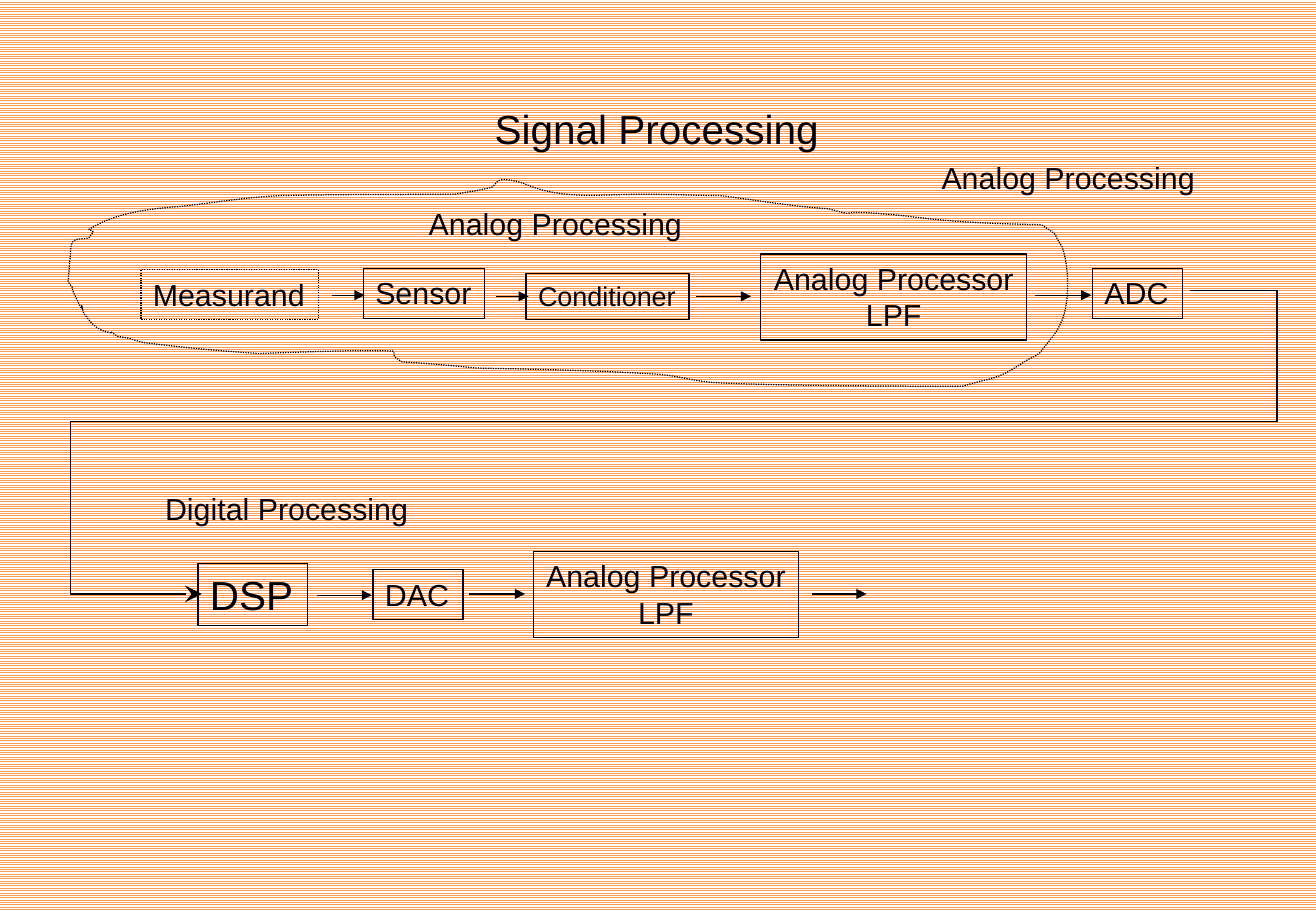
from lxml.etree import SubElement
from pptx import Presentation
from pptx.dml.color import RGBColor
from pptx.enum.dml import MSO_LINE, MSO_PATTERN
from pptx.enum.shapes import MSO_CONNECTOR, MSO_SHAPE
from pptx.enum.text import MSO_ANCHOR, MSO_AUTO_SIZE, PP_ALIGN
from pptx.oxml.ns import qn
from pptx.util import Emu, Inches, Pt

COLUMNS, ROWS = 1083, 750
CELL = Inches(0.01)
INK, STRIPE, PAPER = "000000", "F89E5A", "FFFFFF"
FONT = "Arial"

TITLE = ("Signal Processing", (397, 81, 287, 50), 24)
CAPTIONS = [
    ("Analog Processing", (765, 126, 230, 40), 18),
    ("Analog Processing", (343, 164, 230, 40), 18),
    ("Digital Processing", (126, 399, 221, 40), 18),
]
STAGES = [
    ("Measurand", (116, 222, 146, 41), 18),
    ("Sensor", (299, 221, 100, 41), 18),
    ("Conditioner", (433, 225, 134, 38), 16),
    ("Analog Processor\nLPF", (626, 209, 219, 71), 18),
    ("ADC", (899, 221, 74, 41), 18),
    ("DSP", (163, 464, 90, 51), 24),
    ("DAC", (307, 469, 74, 41), 18),
    ("Analog Processor\nLPF", (439, 454, 218, 71), 18),
]
DOTTED_STAGE = "Measurand"
ARROWS = [
    (273, 300, 243), (408, 435, 244), (573, 618, 244), (852, 898, 243),
    (261, 306, 490), (386, 432, 489), (668, 713, 489),
]
FEED = [(979, 239), (1051, 239), (1051, 347), (58, 347), (58, 489), (166, 489)]
CLOUD_START = (73, 189)
CLOUD_CURVES = [
    (95, 175, 122, 172, 148, 170), (176, 167, 205, 162, 233, 161),
    (280, 160, 327, 160, 374, 160), (384, 158, 395, 157, 405, 154),
    (408, 152, 409, 148, 413, 148), (419, 147, 431, 151, 431, 151),
    (465, 166, 498, 159, 538, 160), (556, 160, 574, 161, 592, 161),
    (610, 163, 627, 166, 644, 168), (657, 170, 682, 172, 682, 172),
    (717, 181, 671, 170, 747, 178), (786, 183, 812, 184, 857, 185),
    (874, 196, 865, 190, 874, 203), (880, 219, 881, 252, 872, 268),
    (869, 275, 862, 282, 857, 289), (855, 292, 850, 294, 846, 296),
    (838, 301, 828, 308, 818, 311), (813, 313, 808, 313, 803, 315),
    (799, 316, 792, 318, 792, 318), (779, 318, 642, 318, 588, 315),
    (572, 314, 556, 309, 540, 308), (491, 305, 441, 304, 392, 303),
    (372, 301, 351, 299, 331, 298), (329, 296, 327, 296, 325, 294),
    (324, 293, 325, 289, 323, 289), (286, 288, 250, 290, 213, 291),
    (180, 289, 150, 286, 118, 282), (103, 278, 110, 279, 97, 277),
    (83, 268, 101, 278, 84, 272), (77, 269, 73, 263, 69, 258),
    (64, 241, 72, 265, 64, 248), (54, 228, 65, 244, 56, 232),
    (57, 224, 57, 217, 58, 210), (58, 206, 58, 202, 60, 199),
    (62, 196, 68, 197, 73, 196), (77, 190, 79, 191, 73, 189),
]


def color(hex_code):
    return RGBColor.from_string(hex_code)


def cells(*counts):
    return [Emu(count * CELL) for count in counts]


def write(shape, text, size):
    frame = shape.text_frame
    frame.text = text
    frame.word_wrap = False
    frame.auto_size = MSO_AUTO_SIZE.SHAPE_TO_FIT_TEXT
    frame.vertical_anchor = MSO_ANCHOR.TOP
    several = len(frame.paragraphs) > 1
    for paragraph in frame.paragraphs:
        paragraph.alignment = PP_ALIGN.CENTER if several else PP_ALIGN.LEFT
        paragraph.line_spacing = 1.0
        paragraph.space_before = Pt(0)
        paragraph.font.name = FONT
        paragraph.font.size = Pt(size)
        paragraph.font.color.rgb = color(INK)


def stroke(shape, dotted=False, arrowhead=None, head_size="med"):
    shape.line.color.rgb = color(INK)
    shape.line.width = Pt(0.75)
    if dotted:
        shape.line.dash_style = MSO_LINE.ROUND_DOT
    if arrowhead:
        outline = shape._element.spPr.find(qn("a:ln"))
        SubElement(outline, qn("a:tailEnd"), type=arrowhead, w=head_size, len=head_size)


def add_outline(slide, points, close, **style):
    start, *rest = [cells(*point) for point in points]
    builder = slide.shapes.build_freeform(*start)
    builder.add_line_segments(rest, close=close)
    outline = builder.convert_to_shape()
    outline.fill.background()
    outline.shadow.inherit = False
    stroke(outline, **style)
    return outline


def bend(outline):
    segments = list(outline._element.iter(qn("a:lnTo")))
    for first, second, third in zip(segments[::3], segments[1::3], segments[2::3]):
        first.tag = qn("a:cubicBezTo")
        for segment in (second, third):
            first.append(segment[0])
            segment.getparent().remove(segment)


def main():
    """Build the signal processing chain slide."""
    deck = Presentation()
    deck.slide_width, deck.slide_height = cells(COLUMNS, ROWS)
    slide = deck.slides.add_slide(deck.slide_layouts[5])
    backdrop = slide.background.fill
    backdrop.patterned()
    backdrop.pattern = MSO_PATTERN.LIGHT_HORIZONTAL
    backdrop.fore_color.rgb = color(STRIPE)
    backdrop.back_color.rgb = color(PAPER)

    heading, place, size = TITLE
    title = slide.shapes.title
    title.left, title.top, title.width, title.height = cells(*place)
    write(title, heading, size)

    for text, place, size in STAGES:
        stage = slide.shapes.add_shape(MSO_SHAPE.RECTANGLE, *cells(*place))
        stage.fill.background()
        stage.shadow.inherit = False
        stroke(stage, dotted=text == DOTTED_STAGE)
        write(stage, text, size)

    for left, right, level in ARROWS:
        arrow = slide.shapes.add_connector(MSO_CONNECTOR.STRAIGHT, *cells(left, level, right, level))
        stroke(arrow, arrowhead="triangle")
        SubElement(arrow._element.spPr, qn("a:effectLst"))

    add_outline(slide, FEED, close=False, arrowhead="stealth", head_size="lg")
    cloud_points = [CLOUD_START]
    for curve in CLOUD_CURVES:
        cloud_points += zip(curve[::2], curve[1::2])
    bend(add_outline(slide, cloud_points, close=True, dotted=True))

    for text, place, size in CAPTIONS:
        write(slide.shapes.add_textbox(*cells(*place)), text, size)

    deck.save("out.pptx")


if __name__ == "__main__":
    main()
